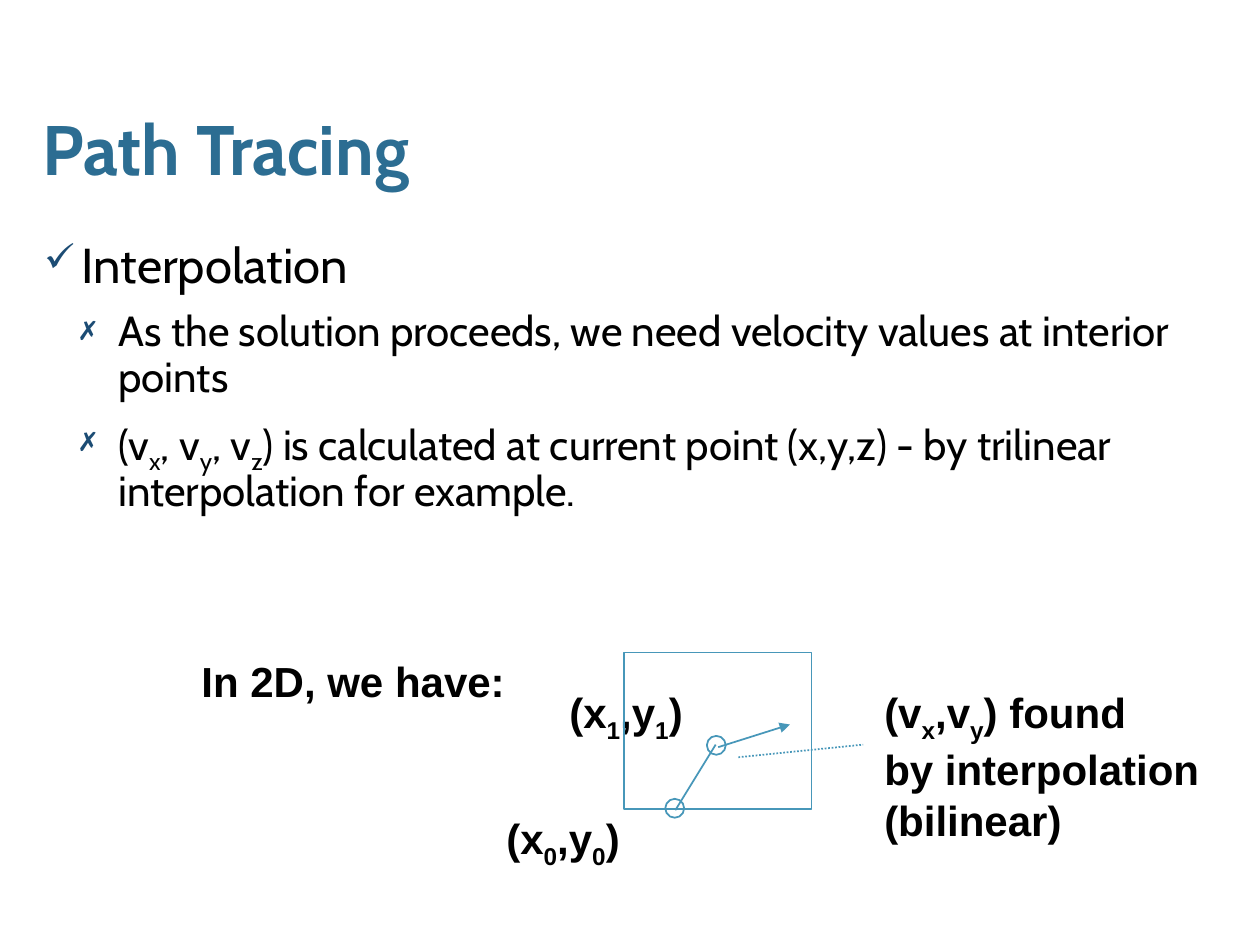
from dataclasses import dataclass

from lxml import etree
from pptx import Presentation
from pptx.dml.color import RGBColor
from pptx.enum.dml import MSO_LINE
from pptx.enum.shapes import MSO_CONNECTOR, MSO_SHAPE
from pptx.enum.text import MSO_AUTO_SIZE
from pptx.oxml.ns import qn
from pptx.util import Inches, Pt

STRAIGHT = MSO_CONNECTOR.STRAIGHT
RECTANGLE = MSO_SHAPE.RECTANGLE
OVAL = MSO_SHAPE.OVAL
DOTTED = MSO_LINE.ROUND_DOT
FIT_SHAPE = MSO_AUTO_SIZE.SHAPE_TO_FIT_TEXT


@dataclass(frozen=True)
class Theme:
    ink: str = "000000"
    title: str = "2C6D92"
    bullet: str = "1C4C74"
    line: str = "4797B9"
    body_font: str = "Cabin"
    label_font: str = "Arial"
    title_size: int = 40
    topic_size: int = 28
    text_size: int = 24
    line_width: int = 1


THEME = Theme()


def add_box(page, left, top, width, height, side_inset=0.0, wrap=True):
    box = page.shapes.add_textbox(
        Inches(left), Inches(top), Inches(width), Inches(height))
    frame = box.text_frame
    frame.word_wrap = wrap
    frame.margin_left = frame.margin_right = Inches(side_inset)
    frame.margin_top = frame.margin_bottom = Inches(0.05)
    return frame


def add_bullet(para, symbol, indent):
    props = para._p.get_or_add_pPr()
    props.set("marL", str(Inches(indent)))
    props.set("indent", str(Inches(-0.3)))
    color = etree.SubElement(props, qn("a:buClr"))
    etree.SubElement(color, qn("a:srgbClr"), val=THEME.bullet)
    etree.SubElement(props, qn("a:buSzPct"), val="80000")
    etree.SubElement(props, qn("a:buChar"), char=symbol)


def write(frame, text, first=False, font=THEME.body_font, size=THEME.text_size,
          color=THEME.ink, bold=False, bullet=None, indent=0.0, level=0,
          spacing=None, before=None):
    """Write one paragraph; parts between underscores become subscripts."""
    para = frame.paragraphs[0] if first else frame.add_paragraph()
    para.level = level
    if bullet:
        add_bullet(para, bullet, indent)
    if spacing:
        para.line_spacing = spacing
    if before:
        para.space_before = Pt(before)
    for index, part in enumerate(text.split("_")):
        span = para.add_run()
        span.text = part
        span.font.name = font
        span.font.size = Pt(size)
        span.font.bold = bold
        span.font.color.rgb = RGBColor.from_string(color)
        if index % 2:
            span.font._element.set("baseline", "-25000")


def add_label(page, lines, left, top, width, height=0.5):
    frame = add_box(page, left, top, width, height, side_inset=0.1, wrap=False)
    frame.auto_size = FIT_SHAPE
    for index, text in enumerate(lines):
        write(frame, text, first=index == 0, font=THEME.label_font, bold=True)


def style_line(line):
    line.color.rgb = RGBColor.from_string(THEME.line)
    line.width = Pt(THEME.line_width)


def add_outline(page, kind, left, top, width, height):
    shape = page.shapes.add_shape(
        kind, Inches(left), Inches(top), Inches(width), Inches(height))
    shape.shadow.inherit = False
    shape.fill.background()
    style_line(shape.line)


def add_line(page, start, end, dash=None, arrow=False):
    line = page.shapes.add_connector(
        STRAIGHT, *(Inches(value) for value in start + end))
    style_line(line.line)
    if dash:
        line.line.dash_style = dash
    if arrow:
        etree.SubElement(line.line._get_or_add_ln(), qn("a:tailEnd"), type="triangle")
    etree.SubElement(line._element.spPr, qn("a:effectLst"))


def add_content(page):
    body = add_box(page, 0.35, 1.81, 9.32, 4.98)
    write(body, "Interpolation", first=True, size=THEME.topic_size,
          bullet="✓", indent=0.3)
    for text in (
        "As the solution proceeds, we need velocity values at interior points",
        "(v_x_, v_y_, v_z_) is calculated at current point (x,y,z) - "
        "by trilinear interpolation for example.",
    ):
        write(body, text, bullet="✗", indent=0.59, level=1, spacing=0.9, before=10)
    title = add_box(page, 0.34, 0.84, 9.31, 0.73)
    write(title, "Path Tracing", first=True, size=THEME.title_size,
          color=THEME.title, bold=True, spacing=0.95)


def add_diagram(page):
    add_label(page, ["In 2D, we have:"], 1.5, 5.15, 2.68)
    add_label(page, ["(x_0_,y_0_)"], 3.92, 6.4, 1.18)
    add_label(page, ["(x_1_,y_1_)"], 4.42, 5.4, 1.18)
    add_outline(page, RECTANGLE, 4.95, 5.18, 1.49, 1.24)
    add_line(page, (5.36, 6.43), (5.68, 5.91))
    for left, top in ((5.28, 6.34), (5.61, 5.84)):
        add_outline(page, OVAL, left, top, 0.15, 0.15)
    add_line(page, (5.7, 5.93), (6.27, 5.75), arrow=True)
    add_label(page, ["(v_x_,v_y_) found", "by interpolation", "(bilinear)"],
              6.92, 5.4, 2.73, 1.3)
    add_line(page, (5.86, 6.01), (6.85, 5.91), dash=DOTTED)


def main():
    deck = Presentation()
    deck.slide_width = Inches(10)
    deck.slide_height = Inches(7.5)
    page = deck.slides.add_slide(deck.slide_layouts[6])
    add_content(page)
    add_diagram(page)
    deck.save("out.pptx")


if __name__ == "__main__":
    main()
